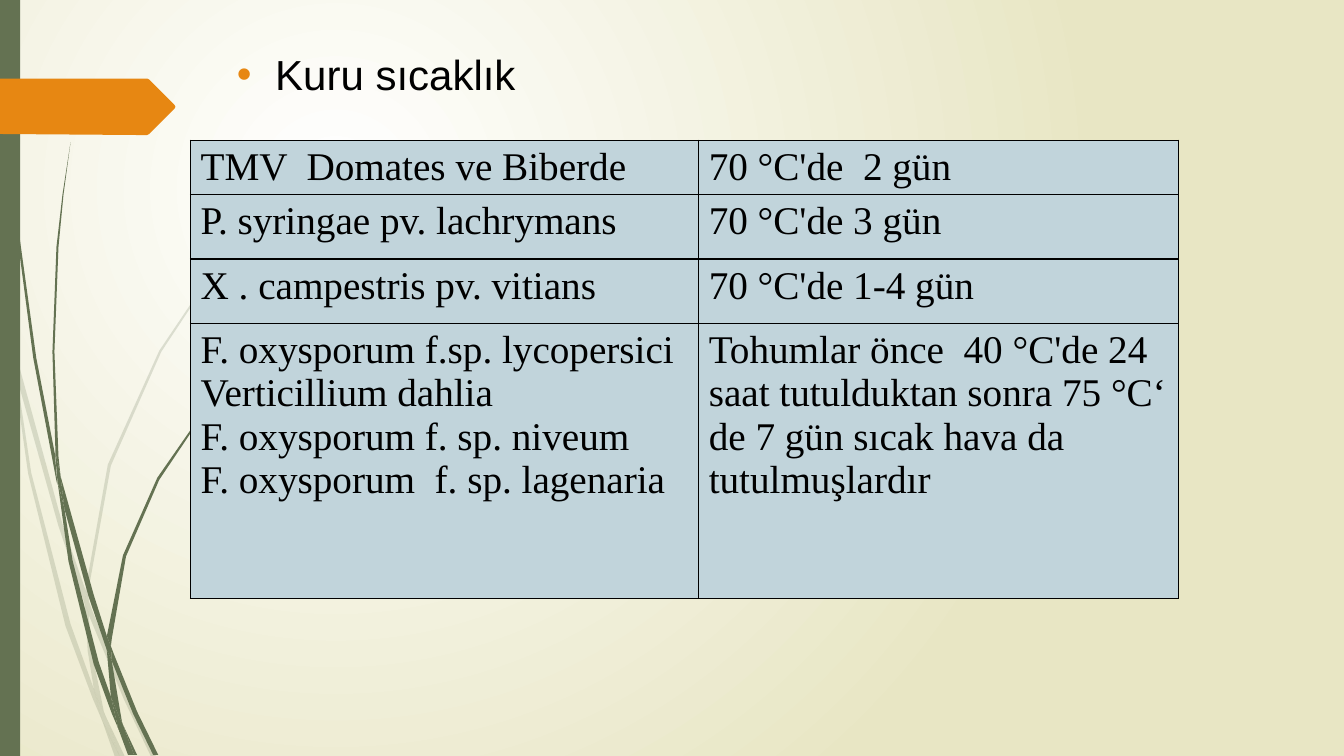
from lxml import etree
from pptx import Presentation
from pptx.dml.color import RGBColor
from pptx.enum.shapes import MSO_SHAPE
from pptx.enum.text import MSO_ANCHOR, MSO_AUTO_SIZE, PP_ALIGN
from pptx.oxml.ns import qn
from pptx.util import Inches, Pt

RECTANGLE = MSO_SHAPE.RECTANGLE
MIDDLE, NO_FIT, LEFT = MSO_ANCHOR.MIDDLE, MSO_AUTO_SIZE.NONE, PP_ALIGN.LEFT

WHITE = RGBColor(0xFF, 0xFF, 0xFF)
BLACK = RGBColor(0x00, 0x00, 0x00)
CREAM = RGBColor(0xE8, 0xE6, 0xC4)
GREEN = RGBColor(0x64, 0x72, 0x52)
ORANGE = RGBColor(0xE7, 0x87, 0x12)
PALE_BLUE = RGBColor(0xC1, 0xD4, 0xDB)

# Outlines as x, y pairs in hundredths of an inch
PALE_GRASS = [
    (11, 350, 9, 322, 0, 282, 0, 299, 10, 344),
    (58, 522, 84, 599, 85, 586, 62, 520, 14, 345, 17, 376),
    (92, 607, 88, 596, 88, 610, 123, 694, 150, 751, 155, 751, 127, 692),
    (119, 751, 124, 751, 105, 711),
    (93, 683, 70, 619, 31, 469, 17, 376, 11, 350, 28, 470, 65, 621, 92, 693,
     101, 714, 99, 707),
    (84, 599, 87, 646, 93, 683, 96, 692, 105, 711, 103, 706, 91, 646, 88, 610,
     88, 608),
    (88, 584, 110, 462, 160, 349, 229, 245, 268, 198, 290, 175, 312, 154,
     312, 153, 289, 175, 268, 197, 228, 244, 158, 348, 107, 461, 85, 584,
     85, 586, 88, 596),
    (101, 714, 114, 751, 119, 751),
    (88, 608, 88, 610, 88, 596, 85, 586, 84, 599),
    (96, 692, 93, 683, 99, 707, 101, 714, 119, 751, 105, 711),
]
DARK_GRASS = [
    (7, 110, 17, 233, 33, 355, 56, 477, 57, 481, 55, 457, 55, 453, 36, 355,
     19, 232, 8, 109, 5, 48, 4, 0, 3, 0, 4, 48),
    (88, 592, 106, 645, 106, 633, 106, 631, 93, 590, 60, 472, 64, 505),
    (113, 649, 110, 641, 111, 656, 132, 708, 152, 749, 157, 749, 136, 706),
    (110, 691, 98, 657, 72, 556, 64, 505, 57, 477, 68, 557, 93, 659, 111, 708,
     117, 722, 116, 717),
    (60, 472, 58, 453, 54, 349, 58, 245, 63, 193, 70, 141, 62, 193, 56, 245,
     52, 349, 55, 449),
    (133, 749, 136, 749, 122, 719),
    (57, 477, 64, 505, 60, 472, 55, 449, 55, 453),
    (111, 633, 125, 552, 158, 476, 205, 406, 231, 374, 245, 359, 261, 344,
     260, 344, 245, 358, 231, 373, 204, 405, 156, 474, 122, 551, 106, 631,
     110, 641),
    (117, 722, 127, 749, 131, 749),
    (106, 645, 110, 691, 116, 706, 122, 719, 121, 716, 111, 656, 109, 651),
    (106, 645, 109, 651, 111, 656, 110, 641, 106, 631, 106, 633),
    (116, 706, 110, 691, 116, 717, 117, 722, 130, 749, 133, 749, 122, 719),
]
ARROW = (173, 108, 148, 133, 146, 134, 136, 134, 0, 133, 0, 78, 136, 78,
         146, 78, 148, 79, 173, 104, 174, 106)

TREATMENTS = [
    ("TMV  Domates ve Biberde", "70 °C'de  2 gün"),
    ("P. syringae pv. lachrymans", "70 °C'de 3 gün"),
    ("X . campestris pv. vitians", "70 °C'de 1-4 gün"),
    ("F. oxysporum f.sp. lycopersici\nVerticillium dahlia\n"
     "F. oxysporum f. sp. niveum\nF. oxysporum  f. sp. lagenaria",
     "Tohumlar önce  40 °C'de 24 saat tutulduktan sonra 75 °C‘ de 7 gün "
     "sıcak hava da tutulmuşlardır"),
]


def add_color(parent, color):
    """Add a solid fill element and return its colour element."""
    fill = etree.SubElement(parent, qn("a:solidFill"))
    return etree.SubElement(fill, qn("a:srgbClr"), val=str(color))


class SlideBuilder:
    heading_font, heading_size = "Arial", Pt(30)
    table_font, table_size = "Times New Roman", Pt(28)

    def __init__(self, page):
        self.page = page

    def background(self, inner, outer):
        fill = self.page.background.fill
        fill.gradient()
        for stop, color in zip(fill.gradient_stops, (inner, outer)):
            stop.color.rgb = color
        stops = self.page.element.find(".//" + qn("a:gsLst"))
        for stop, position in zip(stops, ("0", "100000")):
            stop.set("pos", position)
        gradient = stops.getparent()
        for old in gradient.findall(qn("a:lin")):
            gradient.remove(old)
        circle = etree.Element(qn("a:path"), path="circle")
        etree.SubElement(circle, qn("a:fillToRect"),
                         l="50000", t="50000", r="100000", b="100000")
        stops.addnext(circle)

    def paint(self, shape, color, opacity=100):
        shape.shadow.inherit = False
        shape.fill.solid()
        shape.fill.fore_color.rgb = color
        shape.line.fill.background()
        if opacity < 100:
            value = shape.element.spPr.find(".//" + qn("a:srgbClr"))
            etree.SubElement(value, qn("a:alpha"), val=str(opacity * 1000))

    def outline(self, numbers, color, opacity=100):
        points = list(zip(numbers[::2], numbers[1::2]))
        builder = self.page.shapes.build_freeform(*points[0], scale=Inches(0.01))
        builder.add_line_segments(points[1:], close=True)
        self.paint(builder.convert_to_shape(), color, opacity)

    def rectangle(self, left, top, width, height, color):
        shape = self.page.shapes.add_shape(
            RECTANGLE, Inches(left), Inches(top), Inches(width), Inches(height))
        self.paint(shape, color)

    def heading(self, text, left, top, width, height):
        title = self.page.shapes.title
        title.left, title.top = Inches(left), Inches(top)
        title.width, title.height = Inches(width), Inches(height)
        frame = title.text_frame
        frame.text = text
        frame.word_wrap, frame.auto_size = True, NO_FIT
        frame.vertical_anchor = MIDDLE
        para = frame.paragraphs[0]
        para.alignment = LEFT
        properties = para._p.get_or_add_pPr()
        properties.set("marL", str(Inches(0.38)))
        properties.set("indent", str(-Inches(0.38)))
        bullet_color = etree.SubElement(properties, qn("a:buClr"))
        etree.SubElement(bullet_color, qn("a:srgbClr"), val=str(ORANGE))
        etree.SubElement(properties, qn("a:buFont"), typeface="Arial")
        etree.SubElement(properties, qn("a:buChar"), char="•")
        self.style(para, self.heading_font, self.heading_size)

    def style(self, para, font, size):
        for span in para.runs:
            span.font.name, span.font.size = font, size
            span.font.color.rgb = BLACK

    def table(self, rows, left, top, widths, heights):
        table = self.page.shapes.add_table(
            len(rows), len(widths), Inches(left), Inches(top),
            Inches(sum(widths)), Inches(sum(heights))).table
        table.first_row = table.horz_banding = False
        for column, width in zip(table.columns, widths):
            column.width = Inches(width)
        for row, height, texts in zip(table.rows, heights, rows):
            row.height = Inches(height)
            for cell, text in zip(row.cells, texts):
                self.cell(cell, text)

    def cell(self, cell, text):
        properties = cell._tc.get_or_add_tcPr()
        for side in ("lnL", "lnR", "lnT", "lnB"):
            border = etree.SubElement(properties, qn("a:" + side), w=str(Pt(1)))
            add_color(border, BLACK)
        cell.fill.solid()
        cell.fill.fore_color.rgb = PALE_BLUE
        cell.text_frame.text = text
        for para in cell.text_frame.paragraphs:
            self.style(para, self.table_font, self.table_size)


def main():
    deck = Presentation()
    deck.slide_width, deck.slide_height = Inches(13.33), Inches(7.5)
    builder = SlideBuilder(deck.slides.add_slide(deck.slide_layouts[5]))

    # Background and grass decoration
    builder.background(WHITE, CREAM)
    for blade in PALE_GRASS:
        builder.outline(blade, GREEN, opacity=20)
    for blade in DARK_GRASS:
        builder.outline(blade, GREEN)
    builder.rectangle(0, 0, 0.2, 7.5, GREEN)
    builder.outline(ARROW, ORANGE)

    # Heading and treatment table
    builder.heading("Kuru sıcaklık", 2.25, 0.4, 9.75, 0.66)
    builder.table(TREATMENTS, 1.89, 1.39, (5.04, 4.76), (0.54, 0.64, 0.64, 2.73))
    deck.save("out.pptx")


if __name__ == "__main__":
    main()
